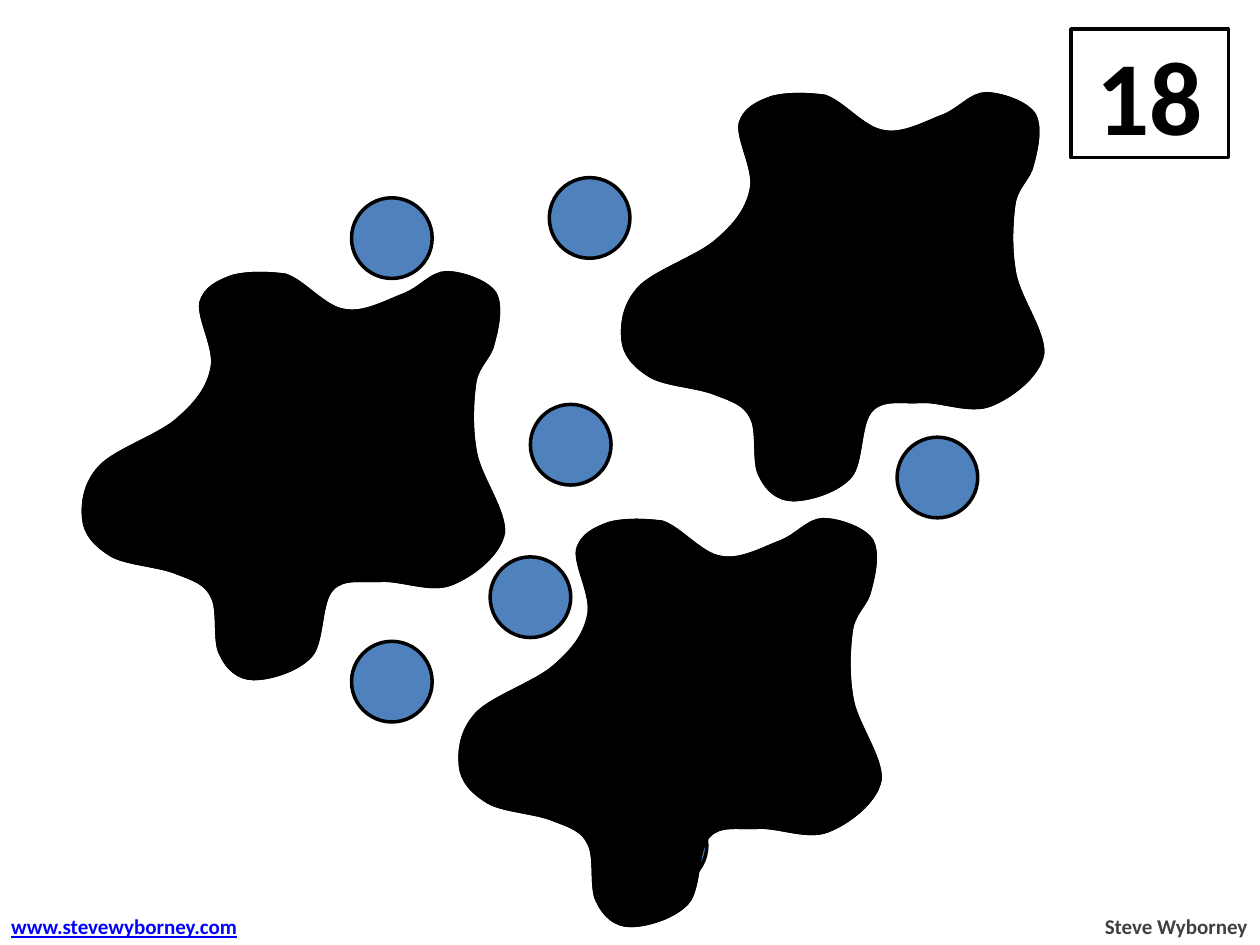
from pptx import Presentation
from pptx.dml.color import RGBColor
from pptx.enum.shapes import MSO_SHAPE as Preset
from pptx.enum.text import MSO_ANCHOR as Anchor, MSO_AUTO_SIZE as AutoSize, PP_ALIGN as Align
from pptx.oxml.ns import qn
from pptx.oxml.xmlchemy import OxmlElement
from pptx.util import Inches, Pt

COLORS = {
    "black": "000000",
    "white": "FFFFFF",
    "dot": "4F81BD",
    "link": "0000FF",
    "credit": "404040",
}

DOT_SIZE = 0.64
DOTS = [
    (1.83, 4.35), (2.33, 2.86), (2.79, 5.09), (2.79, 1.57), (3.89, 4.42), (1.02, 3.53),
    (4.97, 6.39), (4.36, 1.41), (6.11, 1.07), (6.15, 5.65), (4.21, 3.21), (5.17, 2.22),
    (6.15, 2.9), (7.36, 2.35), (3.17, 3.78), (5, 4.35), (7.12, 3.47), (4.21, 5.52),
]

SPLAT_WIDTH, SPLAT_HEIGHT = 3.22, 3.35
SPLATS = [(0.72, 2.1), (3.71, 4.06), (5, 0.68)]
SPLAT_START = (23, 224)
SPLAT_CURVES = [
    (10, 216), (2, 207), (1, 195), (0, 184), (1, 168), (14, 154),
    (26, 141), (62, 129), (76, 116), (91, 103), (100, 91), (103, 75),
    (106, 60), (92, 36), (94, 24), (97, 12), (108, 7), (119, 3),
    (130, 0), (146, 0), (161, 2), (176, 7), (192, 28), (208, 30),
    (223, 33), (241, 23), (254, 18), (268, 13), (277, 0), (289, 0),
    (301, 0), (321, 7), (327, 16), (333, 26), (329, 44), (326, 55),
    (324, 67), (313, 73), (311, 88), (309, 103), (308, 124), (312, 144),
    (316, 163), (335, 189), (334, 206), (331, 224), (308, 241), (292, 247),
    (276, 253), (253, 243), (237, 244), (222, 245), (207, 241), (198, 251),
    (188, 261), (191, 293), (181, 304), (170, 316), (148, 322), (136, 322),
    (124, 322), (115, 314), (110, 303), (104, 293), (109, 268), (103, 257),
    (98, 246), (88, 243), (75, 238), (61, 232), (35, 231), SPLAT_START,
]


def color(name):
    return RGBColor.from_string(COLORS[name])


def style_shape(shape, fill):
    shape.shadow.inherit = False
    shape.fill.solid()
    shape.fill.fore_color.rgb = color(fill)
    shape.line.color.rgb = color("black")
    shape.line.width = Pt(2)


def write_text(shape, text, align, font_color, **font_format):
    paragraph = shape.text_frame.paragraphs[0]
    paragraph.alignment = align
    run = paragraph.add_run()
    run.text = text
    run.font.color.rgb = color(font_color)
    for name, value in {"name": "Calibri", "bold": True, **font_format}.items():
        setattr(run.font, name, value)


def add_number(slide, left, top, width, height, text):
    box = slide.shapes.add_shape(
        Preset.RECTANGLE, Inches(left), Inches(top), Inches(width), Inches(height))
    style_shape(box, "white")
    box.text_frame.vertical_anchor = Anchor.MIDDLE
    write_text(box, text, Align.CENTER, "black", size=Pt(60))


def add_footer(slide, left, top, width, height, text, align, font_color, **font_format):
    box = slide.shapes.add_textbox(Inches(left), Inches(top), Inches(width), Inches(height))
    box.text_frame.word_wrap = False
    box.text_frame.auto_size = AutoSize.SHAPE_TO_FIT_TEXT
    write_text(box, text, align, font_color, size=Pt(12), **font_format)


def add_dots(slide, positions, size):
    group = slide.shapes.add_group_shape()
    for left, top in positions:
        dot = group.shapes.add_shape(
            Preset.OVAL, Inches(left), Inches(top), Inches(size), Inches(size))
        style_shape(dot, "dot")


def turn_for_rotation(point):
    x, y = point
    return 100 * SPLAT_WIDTH - y, x


def curve_segments(shape):
    lines = list(shape._element.iter(qn("a:lnTo")))
    for index in range(0, len(lines), 3):
        curve = OxmlElement("a:cubicBezTo")
        lines[index].addprevious(curve)
        for line in lines[index:index + 3]:
            curve.append(line[0])
            line.getparent().remove(line)


def add_splat(slide, left, top, width, height, opacity):
    builder = slide.shapes.build_freeform(*turn_for_rotation(SPLAT_START), scale=Inches(0.01))
    builder.add_line_segments([turn_for_rotation(point) for point in SPLAT_CURVES], close=True)
    splat = builder.convert_to_shape()
    curve_segments(splat)
    style_shape(splat, "black")
    for name, value in {"left": left, "top": top, "width": width, "height": height}.items():
        setattr(splat, name, Inches(value))
    splat.rotation = 270
    if opacity < 100:
        alpha = OxmlElement("a:alpha")
        alpha.set("val", str(opacity * 1000))
        splat._element.spPr.find(qn("a:solidFill"))[0].append(alpha)


def main():
    presentation = Presentation()
    presentation.slide_width = Inches(10)
    presentation.slide_height = Inches(7.5)
    slide = presentation.slides.add_slide(presentation.slide_layouts[6])
    add_number(slide, 8.5, 0.23, 1.25, 1.02, "18")
    add_footer(slide, 8.66, 7.2, 1.34, 0.3, "Steve Wyborney", Align.RIGHT, "credit")
    add_footer(slide, -0.01, 7.2, 2.05, 0.3, "www.stevewyborney.com", Align.LEFT, "link",
               underline=True)
    add_dots(slide, DOTS, DOT_SIZE)
    for left, top in SPLATS:
        for opacity in (100, 40):
            add_splat(slide, left, top, SPLAT_WIDTH, SPLAT_HEIGHT, opacity)
    presentation.save("out.pptx")


if __name__ == "__main__":
    main()
